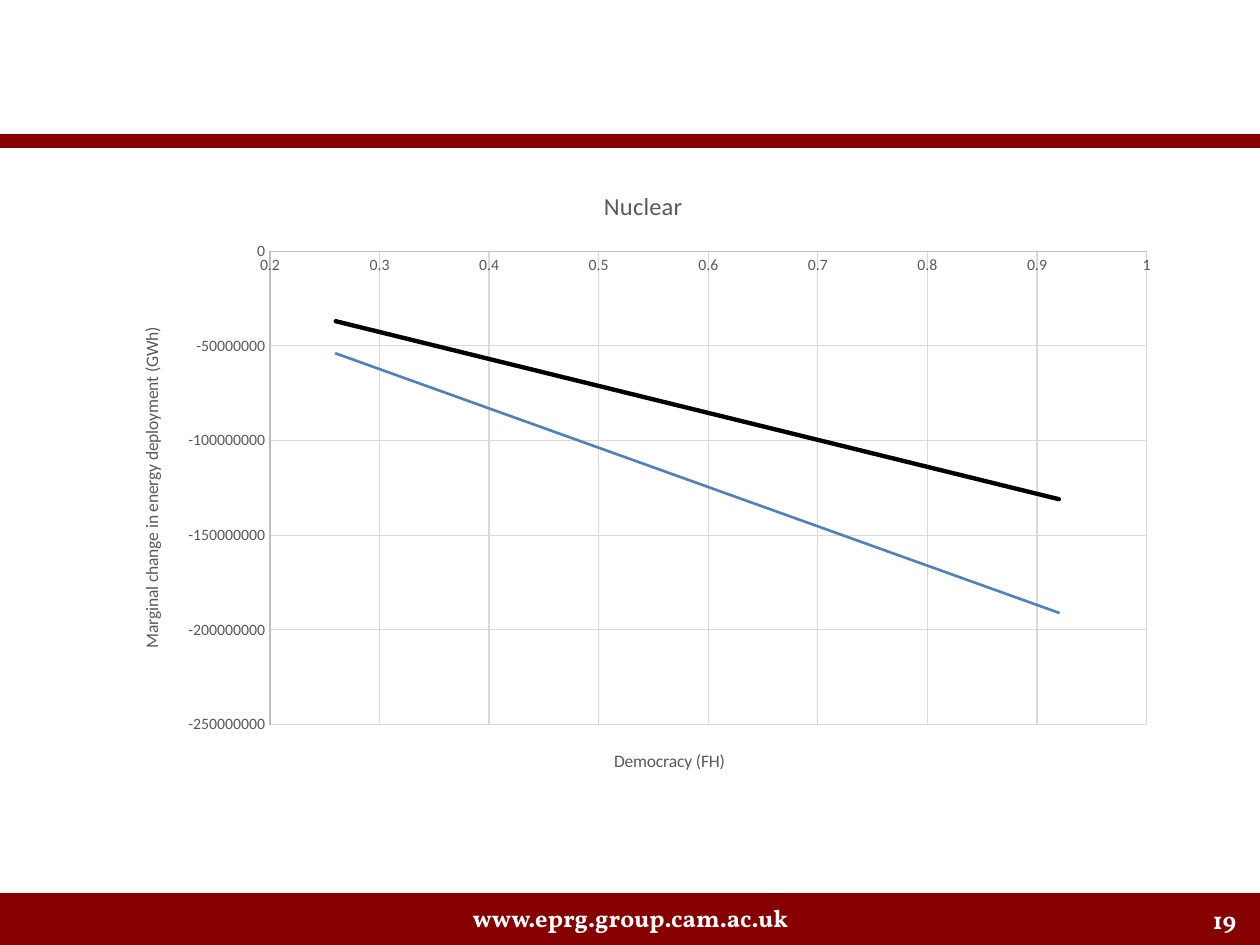
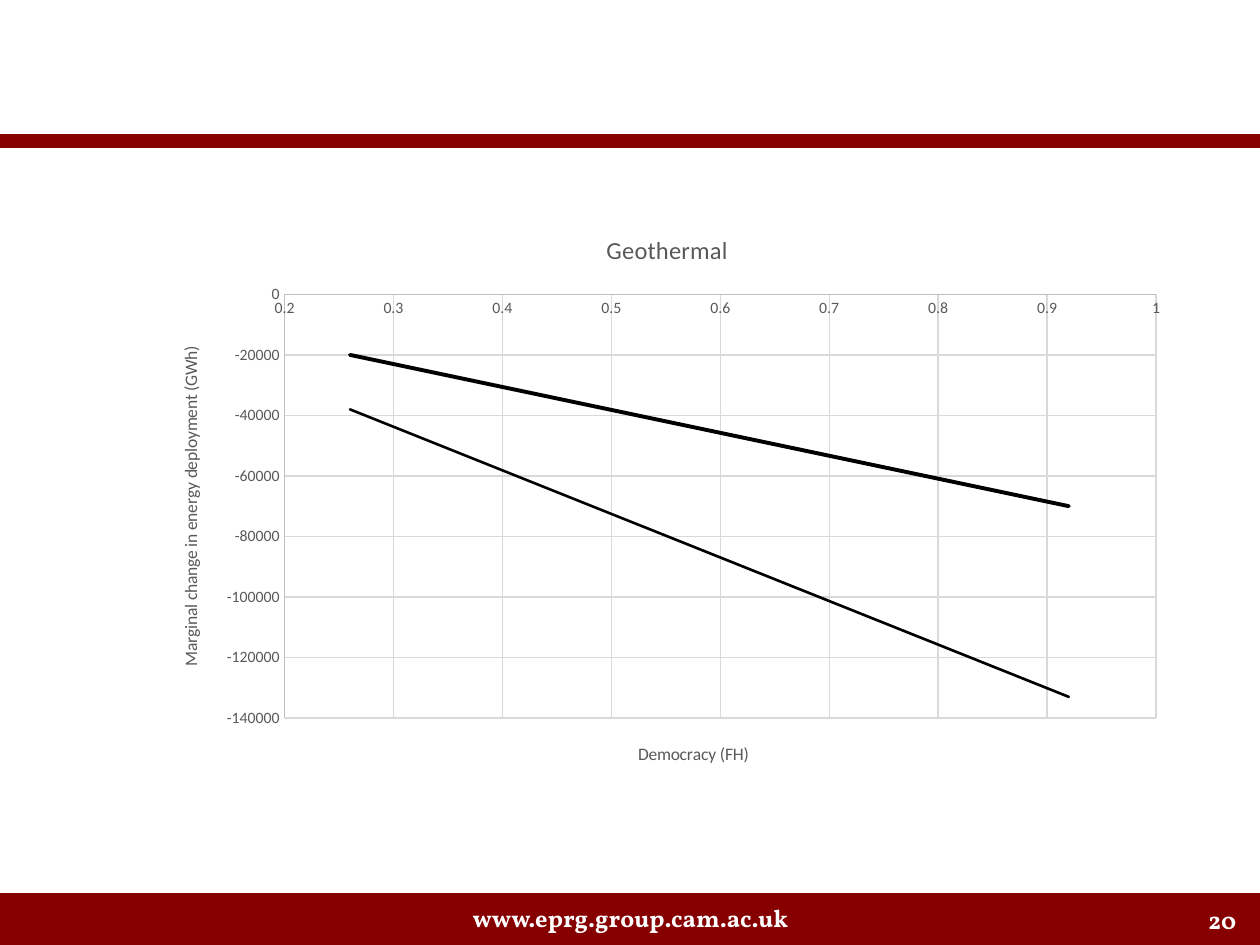
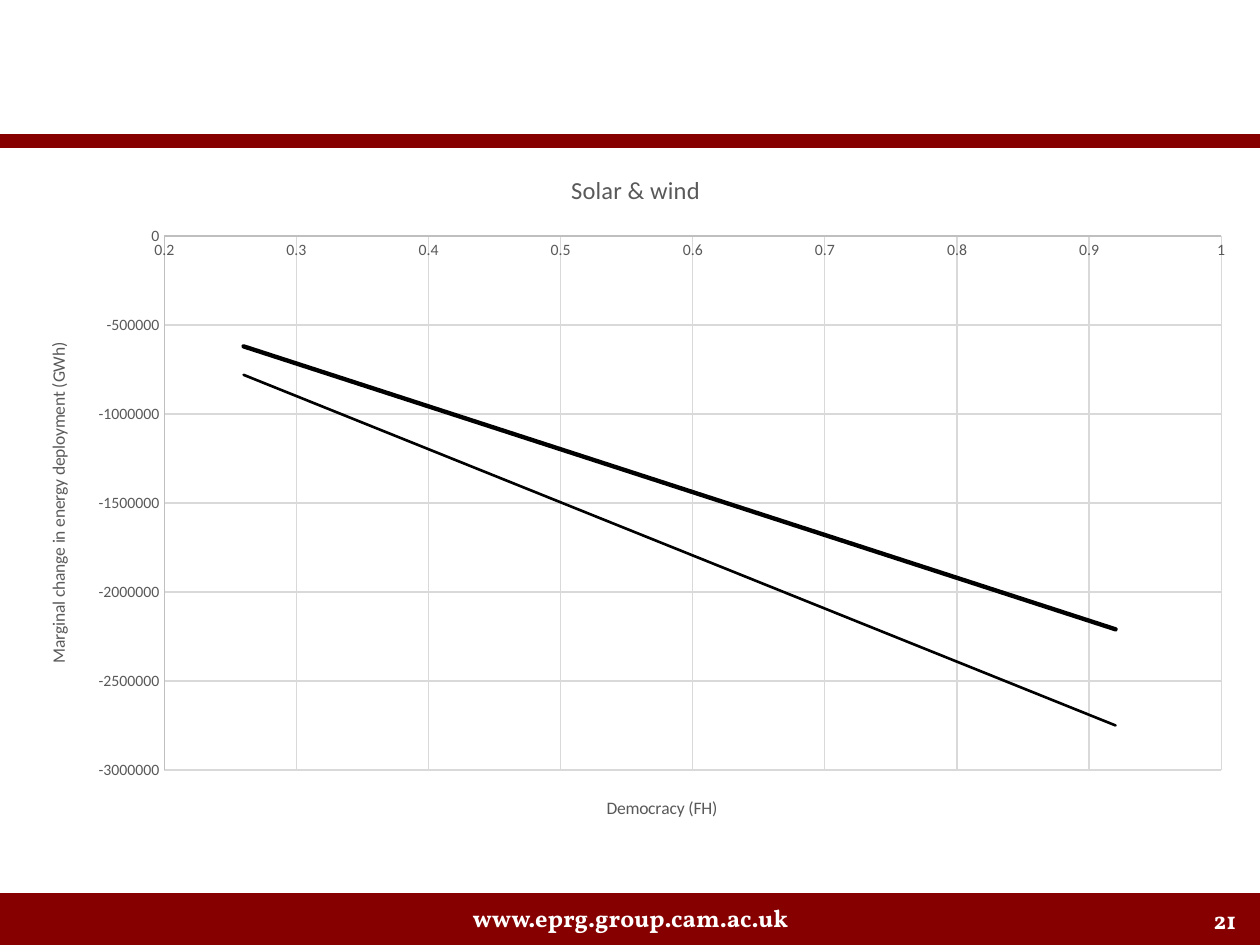
from pptx import Presentation
from pptx import util as u
from pptx.chart.data import XyChartData
from pptx.dml.color import RGBColor
from pptx.enum import chart as ch, shapes, text

COLORS = {"band": "860000", "white": "FFFFFF", "label": "595959", "axis": "BFBFBF",
          "grid": "D9D9D9", "black": "000000", "blue": "4F81BD"}
W, H = 10, 7.5
FIRST_NUMBER = 19
DEMOCRACY = (0.26, 0.92)

# Title, chart box, lowest value, value step, then (end values, colour, width) per line
CHARTS = [
    ("Nuclear", (0.91, 1.31, 8.39, 5.02), -250_000_000, 50_000_000,
     [((-54_000_000, -191_000_000), "blue", 1.5),
      ((-37_000_000, -131_000_000), "black", 2.5)]),
    ("Geothermal", (1.22, 1.67, 8.15, 4.6), -140_000, 20_000,
     [((-38_000, -133_000), "black", 1.5),
      ((-20_000, -70_000), "black", 2.25)]),
    ("Solar & wind", (0.17, 1.17, 9.75, 5.53), -3_000_000, 500_000,
     [((-780_000, -2_750_000), "black", 1.5),
      ((-620_000, -2_210_000), "black", 2.5)]),
]


def rgb(name):
    return RGBColor.from_string(COLORS[name])


def inches(box):
    return [u.Inches(v) for v in box]


def style_font(font, size, color, name="Calibri", bold=False):
    font.size, font.name, font.bold = u.Pt(size), name, bold
    font.color.rgb = rgb(color)


def style_line(line, color, width):
    line.color.rgb = rgb(color)
    line.width = u.Pt(width)


# Shared slide furniture
def add_band(s, top, height):
    band = s.shapes.add_shape(shapes.MSO_SHAPE.RECTANGLE, *inches((0, top, W, height)))
    band.shadow.inherit = False
    band.fill.solid()
    band.fill.fore_color.rgb = rgb("band")
    style_line(band.line, "band", 2)


def add_footer_text(s, words, box, align):
    tf = s.shapes.add_textbox(*inches(box)).text_frame
    tf.word_wrap = True
    tf.vertical_anchor = text.MSO_ANCHOR.MIDDLE
    p = tf.paragraphs[0]
    p.text, p.alignment = words, align
    style_font(p.font, 14, "white", "Vollkorn", True)


def add_frame(s, number):
    add_band(s, H - 0.4, 0.4)
    add_band(s, 1.08, 0.08)
    add_footer_text(s, "www.eprg.group.cam.ac.uk", (3.42, 7.08, 3.17, 0.4),
                    text.PP_ALIGN.CENTER)
    add_footer_text(s, str(number), (7.58, 7.1, 2.33, 0.4), text.PP_ALIGN.RIGHT)


# Charts
def set_title(owner, words, size):
    """Title a chart or an axis."""
    p = (owner.chart_title if hasattr(owner, "chart_title")
         else owner.axis_title).text_frame.paragraphs[0]
    p.text = words
    style_font(p.font, size, "label")


def style_axis(axis, title, low, high, step):
    axis.minimum_scale, axis.maximum_scale, axis.major_unit = low, high, step
    axis.major_tick_mark = axis.minor_tick_mark = ch.XL_TICK_MARK.NONE
    axis.tick_labels.number_format = "General"
    axis.tick_labels.number_format_is_linked = False
    style_font(axis.tick_labels.font, 9, "label")
    style_line(axis.format.line, "axis", 0.75)
    axis.has_major_gridlines = True
    style_line(axis.major_gridlines.format.line, "grid", 0.75)
    set_title(axis, title, 10)


def add_line_chart(s, title, box, low, step, lines):
    data = XyChartData()
    for i, (values, _, _) in enumerate(lines, 1):
        series = data.add_series(f"Series {i}")
        for x, y in zip(DEMOCRACY, values):
            series.add_data_point(x, y)
    chart = s.shapes.add_chart(ch.XL_CHART_TYPE.XY_SCATTER_LINES_NO_MARKERS,
                               *inches(box), data).chart
    chart.has_legend = False
    style_font(chart.font, 10, "black")
    set_title(chart, title, 14)
    chart.plots[0].vary_by_categories = False
    style_axis(chart.category_axis, "Democracy (FH)", 0.2, 1, 0.1)
    style_axis(chart.value_axis, "Marginal change in energy deployment (GWh)", low, 0, step)
    for series, (_, color, width) in zip(chart.plots[0].series, lines):
        series.smooth = False
        series.marker.style = ch.XL_MARKER_STYLE.NONE
        style_line(series.format.line, color, width)
        series.format.line._get_or_add_ln().set("cap", "rnd")


def main():
    prs = Presentation()
    prs.slide_width, prs.slide_height = inches((W, H))
    blank = prs.slide_layouts.get_by_name("Blank")
    for number, content in enumerate(CHARTS, FIRST_NUMBER):
        s = prs.slides.add_slide(blank)
        add_frame(s, number)
        add_line_chart(s, *content)
    prs.save("out.pptx")


if __name__ == "__main__":
    main()
